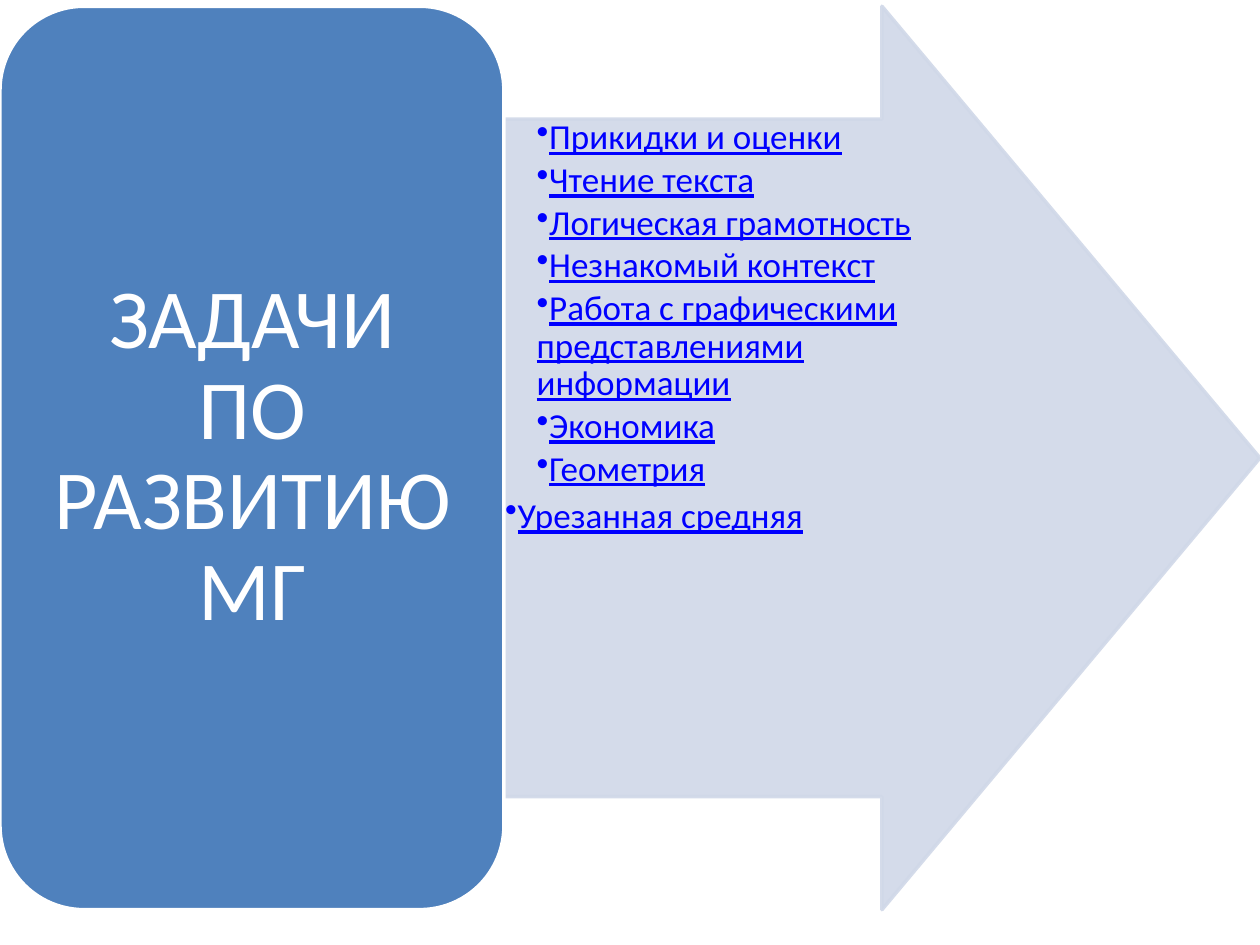
"""Build the slide listing task types for developing mathematical literacy."""
from lxml import etree
from pptx import Presentation
from pptx.dml.color import RGBColor
from pptx.enum.shapes import MSO_SHAPE
from pptx.enum.text import MSO_ANCHOR, MSO_AUTO_SIZE, PP_ALIGN
from pptx.oxml.ns import qn
from pptx.util import Inches, Pt

ROUNDED = MSO_SHAPE.ROUNDED_RECTANGLE
ARROW = MSO_SHAPE.RIGHT_ARROW
MIDDLE = MSO_ANCHOR.MIDDLE
TOP = MSO_ANCHOR.TOP
NO_AUTOFIT = MSO_AUTO_SIZE.NONE
CENTER = PP_ALIGN.CENTER

PALE_BLUE = RGBColor(0xD0, 0xD8, 0xE8)
BLUE = RGBColor(0x4F, 0x81, 0xBD)
LINK_BLUE = RGBColor(0x00, 0x00, 0xFF)
WHITE = RGBColor(0xFF, 0xFF, 0xFF)
FONT = "Calibri"

TITLE = "ЗАДАЧИ ПО РАЗВИТИЮ МГ"
TOPICS = [
    "Прикидки и оценки",
    "Чтение текста",
    "Логическая грамотность",
    "Незнакомый контекст",
    "Работа с графическими представлениями информации",
    "Экономика",
    "Геометрия",
    "Урезанная средняя",
]


def add_panel(slide, kind, left, width, fill_color, line_color):
    shape = slide.shapes.add_shape(
        kind, Inches(left), Inches(0.05), Inches(width), Inches(7.17))
    shape.shadow.inherit = False
    shape.fill.solid()
    shape.fill.fore_color.rgb = fill_color
    shape.line.color.rgb = line_color
    shape.line.width = Pt(2)
    return shape


def format_frame(text_frame, anchor, horizontal, vertical):
    text_frame.word_wrap = True
    text_frame.auto_size = NO_AUTOFIT
    text_frame.vertical_anchor = anchor
    text_frame.margin_left = text_frame.margin_right = Inches(horizontal)
    text_frame.margin_top = text_frame.margin_bottom = Inches(vertical)


presentation = Presentation()
presentation.slide_width = Inches(10)
presentation.slide_height = Inches(7.5)
slide = presentation.slides.add_slide(presentation.slide_layouts[5])

arrow = add_panel(slide, ARROW, 4, 6, PALE_BLUE, PALE_BLUE)
arrow.adjustments[0] = 0.75
arrow.adjustments[1] = 0.5
for color in arrow.element.spPr.iter(qn("a:srgbClr")):
    etree.SubElement(color, qn("a:alpha"), val="90000")

topic_box = slide.shapes.add_textbox(
    Inches(4), Inches(0.94), Inches(3.75), Inches(5.37))
format_frame(topic_box.text_frame, TOP, 0.01, 0.01)
topic_box.text_frame.text = "\n".join(TOPICS)
for paragraph in topic_box.text_frame.paragraphs:
    is_last = paragraph.text == TOPICS[-1]
    paragraph.level = 1
    paragraph.line_spacing = 1.0 if is_last else 0.9
    paragraph.space_after = Pt(2.75)
    properties = paragraph._p.get_or_add_pPr()
    properties.set("marL", str(Inches(0 if is_last else 0.25)))
    properties.set("indent", "0")
    etree.SubElement(properties, qn("a:buChar"), char="•")
    font = paragraph.runs[0].font
    font.name = FONT
    font.size = Pt(20)
    font.underline = True
    font.color.rgb = LINK_BLUE

add_panel(slide, ROUNDED, 0, 4, BLUE, WHITE)

title = slide.shapes.title
title.left, title.top = Inches(0.2), Inches(0.24)
title.width, title.height = Inches(3.61), Inches(6.78)
format_frame(title.text_frame, MIDDLE, 0.2, 0.1)
title.text_frame.text = TITLE
paragraph = title.text_frame.paragraphs[0]
paragraph.alignment = CENTER
paragraph.line_spacing = 0.9
font = paragraph.runs[0].font
font.name = FONT
font.size = Pt(48)
font.color.rgb = WHITE
title.element.getparent().append(title.element)

presentation.save("out.pptx")
